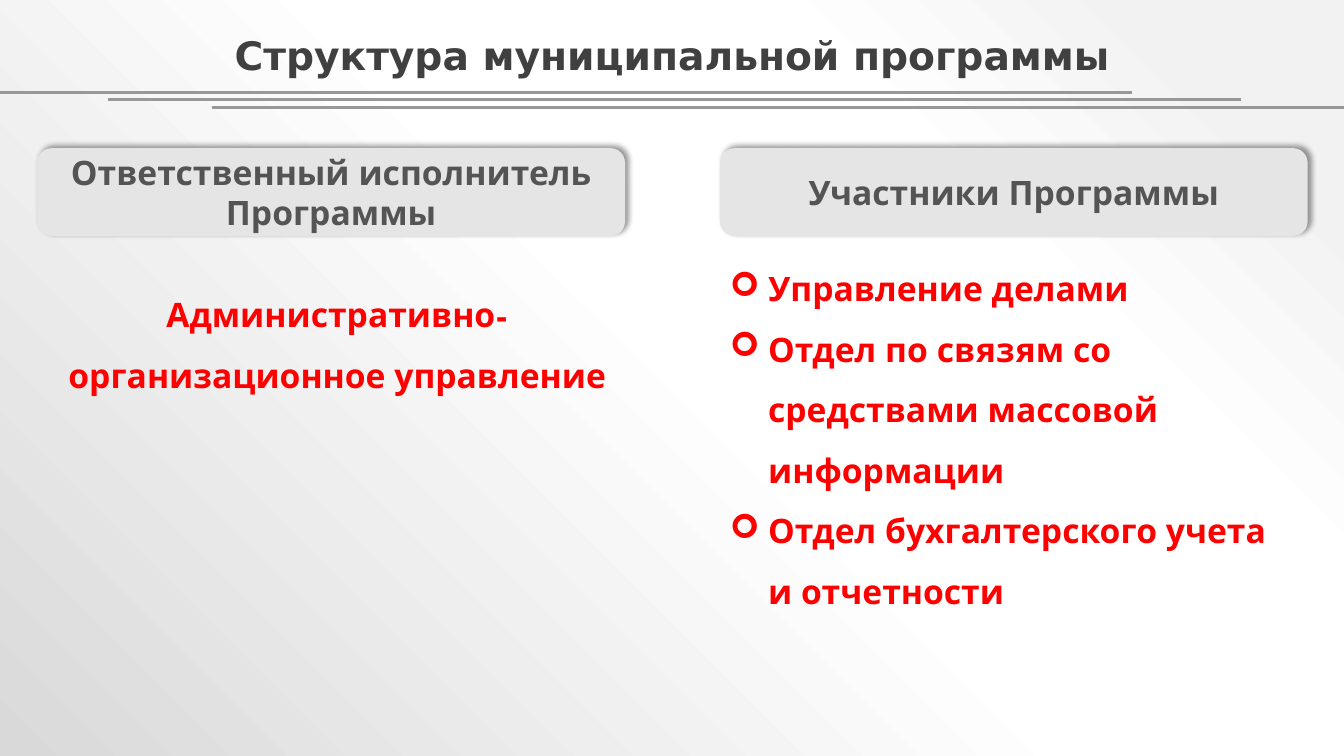
from dataclasses import dataclass

from lxml import etree
from pptx import Presentation
from pptx import util as u
from pptx.dml import color
from pptx.enum import shapes, text
from pptx.oxml import ns

COLORS = {
    "title": "404040",
    "rule": "989898",
    "card": "E5E5E5",
    "heading": "545454",
    "body": "FF0000",
    "shadow": "000000",
}
BACKGROUND_STOPS = [(10, "F2F2F2"), (28, "FFFFFF"), (48, "FFFFFF"), (100, "D9D9D9")]
BODY_FONT = "League Spartan"


@dataclass
class Area:
    left: float
    top: float
    width: float
    height: float

    def lengths(self) -> list[u.Length]:
        return [u.Inches(v) for v in (self.left, self.top, self.width, self.height)]


@dataclass
class Rule:
    start: float
    end: float
    height: float


@dataclass
class Column:
    heading: str
    card: Area
    lines: list[str]
    body: Area
    bullet: str = ""


RULES = [Rule(0, 11.23, 0.92), Rule(1.07, 12.31, 0.99), Rule(2.1, 13.33, 1.07)]
COLUMNS = [
    Column(
        "Ответственный исполнитель Программы",
        Area(0.37, 1.47, 5.83, 0.87),
        ["Административно-организационное управление"],
        Area(0.5, 2.67, 5.69, 1.23),
    ),
    Column(
        "Участники Программы",
        Area(7.14, 1.47, 5.83, 0.87),
        [
            "Управление делами",
            "Отдел по связям со средствами массовой информации",
            "Отдел бухгалтерского учета и отчетности",
        ],
        Area(7.14, 2.41, 5.69, 3.74),
        "➢",
    ),
]


def rgb(name: str) -> color.RGBColor:
    return color.RGBColor.from_string(COLORS[name])


def add_child(parent, tag: str, **attributes):
    child = etree.SubElement(parent, ns.qn(tag))
    for key, value in attributes.items():
        child.set(key, str(value))
    return child


def paint_background(page) -> None:
    page.background.fill.gradient()
    gradient = page.element.find(".//" + ns.qn("a:gradFill"))
    for child in list(gradient):
        gradient.remove(child)
    stops = add_child(gradient, "a:gsLst")
    for position, value in BACKGROUND_STOPS:
        stop = add_child(stops, "a:gs", pos=position * 1000)
        add_child(stop, "a:srgbClr", val=value)
    circle = add_child(gradient, "a:path", path="circle")
    add_child(circle, "a:fillToRect", l=100000, b=100000)


def add_bullet(para, mark: str) -> None:
    properties = para._p.get_or_add_pPr()
    indent = u.Inches(0.38)
    properties.set("marL", str(indent))
    properties.set("indent", str(-indent))
    add_child(properties, "a:buFont", typeface="Wingdings")
    add_child(properties, "a:buChar", char=mark)


def write(frame, lines: list[str], *, size: float, ink: str, font: str = BODY_FONT,
          spacing: float = 1.0, bullet: str = "", middle: bool = True) -> None:
    frame.word_wrap = True
    frame.vertical_anchor = text.MSO_ANCHOR.MIDDLE if middle else text.MSO_ANCHOR.TOP
    for index, line in enumerate(lines):
        para = frame.add_paragraph() if index else frame.paragraphs[0]
        para.alignment = text.PP_ALIGN.LEFT if bullet else text.PP_ALIGN.CENTER
        para.line_spacing = spacing
        if bullet:
            add_bullet(para, bullet)
        span = para.add_run()
        span.text = line
        span.font.name = font
        span.font.size = u.Pt(size)
        span.font.bold = True
        span.font.color.rgb = rgb(ink)


def draw_rule(page, rule: Rule) -> None:
    height = u.Inches(rule.height)
    line = page.shapes.add_connector(
        shapes.MSO_CONNECTOR.STRAIGHT, u.Inches(rule.start), height, u.Inches(rule.end), height)
    line.line.color.rgb = rgb("rule")
    line.line.width = u.Pt(2)
    add_child(line._element.spPr, "a:effectLst")


def draw_card(page, column: Column) -> None:
    card = page.shapes.add_shape(shapes.MSO_SHAPE.ROUNDED_RECTANGLE, *column.card.lengths())
    card.fill.solid()
    card.fill.fore_color.rgb = rgb("card")
    card.line.fill.background()
    card.shadow.inherit = False
    effects = card._element.spPr.find(ns.qn("a:effectLst"))
    shadow = add_child(effects, "a:outerShdw", blurRad=u.Pt(4), dist=u.Pt(3),
                       dir=315 * 60000, algn="bl", rotWithShape=0)
    tint = add_child(shadow, "a:srgbClr", val=COLORS["shadow"])
    add_child(tint, "a:alpha", val=40000)
    write(card.text_frame, [column.heading], size=24, ink="heading")


def draw_body(page, column: Column) -> None:
    box = page.shapes.add_textbox(*column.body.lengths())
    write(box.text_frame, column.lines, size=24, ink="body", spacing=1.5,
          bullet=column.bullet, middle=False)
    box.text_frame.auto_size = text.MSO_AUTO_SIZE.SHAPE_TO_FIT_TEXT


def main() -> None:
    deck = Presentation()
    deck.slide_width, deck.slide_height = u.Inches(13.33), u.Inches(7.5)
    page = deck.slides.add_slide(deck.slide_layouts[6])
    paint_background(page)
    for rule in RULES:
        draw_rule(page, rule)
    title = page.shapes.add_textbox(*Area(0.05, 0.2, 13.23, 0.68).lengths())
    write(title.text_frame, ["Структура муниципальной программы"],
          size=28, ink="title", font="DejaVu Sans")
    for column in COLUMNS:
        draw_card(page, column)
    for column in COLUMNS:
        draw_body(page, column)
    deck.save("out.pptx")


if __name__ == "__main__":
    main()
